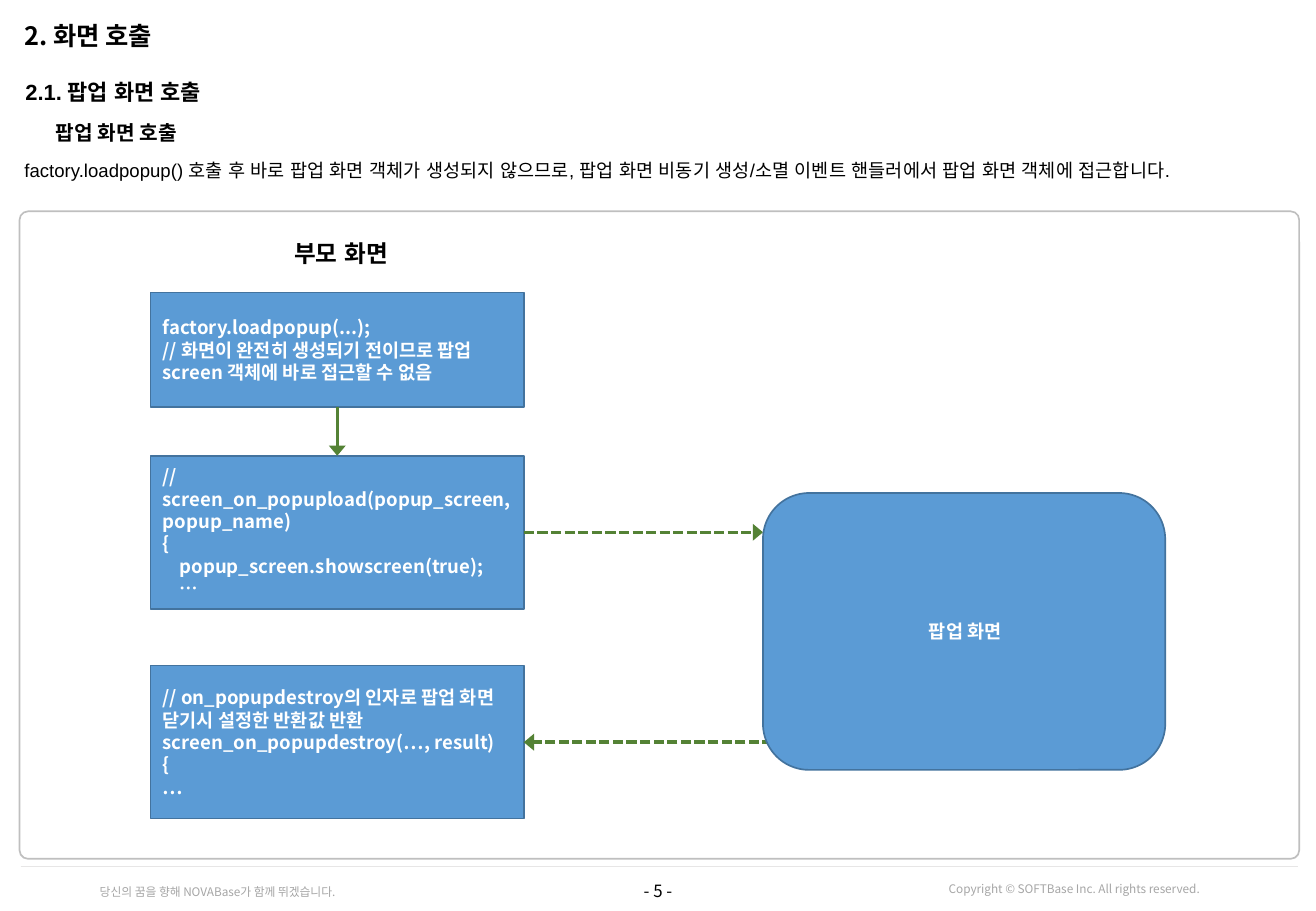
from lxml import etree
from pptx import Presentation
from pptx.dml.color import RGBColor
from pptx.enum.dml import MSO_LINE
from pptx.enum.shapes import MSO_CONNECTOR, MSO_SHAPE
from pptx.enum.text import MSO_ANCHOR, MSO_AUTO_SIZE, PP_ALIGN
from pptx.oxml.ns import qn
from pptx.util import Cm, Pt

BLACK = RGBColor(0x00, 0x00, 0x00)
WHITE = RGBColor(0xFF, 0xFF, 0xFF)
GRAY = RGBColor(0xA6, 0xA6, 0xA6)
SILVER = RGBColor(0xBF, 0xBF, 0xBF)
PALE = RGBColor(0xE7, 0xE6, 0xE6)
BLUE = RGBColor(0x5B, 0x9B, 0xD5)
NAVY = RGBColor(0x43, 0x73, 0x9E)
GREEN = RGBColor(0x54, 0x82, 0x35)
NOTO, ARIAL = "Noto Sans CJK KR", "Arial"
LEFT, CENTER, RIGHT = PP_ALIGN.LEFT, PP_ALIGN.CENTER, PP_ALIGN.RIGHT
TOP, MIDDLE = MSO_ANCHOR.TOP, MSO_ANCHOR.MIDDLE
NO_FIT = MSO_AUTO_SIZE.NONE
STRAIGHT = MSO_CONNECTOR.STRAIGHT
RECT, ROUND = MSO_SHAPE.RECTANGLE, MSO_SHAPE.ROUNDED_RECTANGLE
DASH = MSO_LINE.SQUARE_DOT
WIDE, HIGH = 27.51, 19.05

HEADS = [
    (0, "2. 화면 호출", 0, 0, 0.86, 15, NOTO, True),
    (1, "2.1. 팝업 화면 호출", 0.02, 1.22, 0.71, 13, ARIAL, True),
    (3, "팝업 화면 호출", 0.66, 2.08, 0.71, 12, NOTO, True),
    (2, "factory.loadpopup() 호출 후 바로 팝업 화면 객체가 생성되지 않으므로, "
        "팝업 화면 비동기 생성/소멸 이벤트 핸들러에서 팝업 화면 객체에 접근합니다.",
     0, 2.9, 1.04, 11, ARIAL, False),
]
LOAD = ["factory.loadpopup(...);\n// 화면이 완전히 생성되기 전이므로 팝업 screen 객체에 바로 접근할 수 없음"]
SHOW = ["//\nscreen_on_popupload(popup_screen, popup_name)\n{",
        "    popup_screen.showscreen(true);", "    …"]
CLOSE = ["// on_popupdestroy의 인자로 팝업 화면 닫기시 설정한 반환값 반환\n"
         "screen_on_popupdestroy(…, result)\n{\n…"]


def write(frame, paras, size, face, color, bold=False, align=LEFT):
    """Fill a text frame with paragraphs, run by run."""
    for i, text in enumerate(paras):
        para = frame.paragraphs[0] if i == 0 else frame.add_paragraph()
        para.alignment = align
        para.line_spacing = 1.0
        para.space_before = Pt(0)
        for j, line in enumerate(text.split("\n")):
            if j:
                para.add_line_break()
            run = para.add_run()
            run.text = line
            font = run.font
            font.size, font.bold, font.name = Pt(size), bold, face
            font.color.rgb = color
            east = etree.SubElement(font._element, qn("a:ea"))
            east.set("typeface", face)


def label(slide, x, y, w, h, text, size, face, color, align, bold=False, anchor=MIDDLE):
    """Place one line of text in a box."""
    frame = slide.shapes.add_textbox(Cm(x), Cm(y), Cm(w), Cm(h)).text_frame
    frame.word_wrap = True
    frame.vertical_anchor = anchor
    write(frame, [text], size, face, color, bold, align)


def block(slide, x, y, w, h, paras, kind=RECT, align=LEFT):
    """Place a blue box with white text."""
    shape = slide.shapes.add_shape(kind, Cm(x), Cm(y), Cm(w), Cm(h))
    shape.shadow.inherit = False
    shape.fill.solid()
    shape.fill.fore_color.rgb = BLUE
    shape.line.color.rgb = NAVY
    shape.line.width = Pt(1)
    frame = shape.text_frame
    frame.word_wrap = True
    frame.vertical_anchor = MIDDLE
    frame.margin_right = Cm(0.2)
    write(frame, paras, 11, NOTO, WHITE, True, align)
    return shape


def rule(slide, x1, y1, x2, y2, color, width):
    """Draw a straight line without a shadow."""
    line = slide.shapes.add_connector(STRAIGHT, Cm(x1), Cm(y1), Cm(x2), Cm(y2))
    line.line.color.rgb = color
    line.line.width = Pt(width)
    etree.SubElement(line._element.spPr, qn("a:effectLst"))
    return line


def arrow(slide, x1, y1, x2, y2, dash=None):
    """Draw a green arrow, dashed on request."""
    line = rule(slide, x1, y1, x2, y2, GREEN, 2)
    if dash:
        line.line.dash_style = dash
    tail = etree.SubElement(line.line._get_or_add_ln(), qn("a:tailEnd"))
    tail.set("type", "triangle")
    tail.set("w", "lg")
    tail.set("len", "med")
    return line


def header(slide, x, y, w):
    """Fill the title and body placeholders down the top of the page."""
    parts = {p.placeholder_format.idx: p for p in slide.placeholders}
    for key, text, dx, dy, h, size, face, bold in HEADS:
        part = parts.pop(key)
        part.left, part.top = Cm(x + dx), Cm(y + dy)
        part.width, part.height = Cm(w - dx), Cm(h)
        frame = part.text_frame
        frame.auto_size = NO_FIT
        frame.word_wrap = True
        frame.vertical_anchor = TOP
        frame.margin_left = frame.margin_right = Cm(0.1)
        frame.margin_top = frame.margin_bottom = Cm(0.1)
        props = frame.paragraphs[0]._p.get_or_add_pPr()
        props.set("marL", "0")
        props.set("indent", "0")
        etree.SubElement(props, qn("a:buNone"))
        write(frame, [text], size, face, BLACK, bold)
    for part in parts.values():
        part._element.getparent().remove(part._element)


def flow(slide, x, y, w, h):
    """Draw the framed flow between the parent and popup screens."""
    frame = slide.shapes.add_shape(ROUND, Cm(x), Cm(y), Cm(w), Cm(h))
    frame.adjustments[0] = 0.013
    frame.shadow.inherit = False
    frame.fill.background()
    frame.line.color.rgb = SILVER
    frame.line.width = Pt(1)

    left, wide, tall = x + 2.74, 7.8, 3.2
    edge, mid = left + wide, left + wide / 2
    first, second, third = y + 1.7, y + 5.11, y + 9.5
    label(slide, mid - 1.92, y + 0.46, 4, 0.86, "부모 화면", 14, ARIAL, BLACK,
          CENTER, True, TOP)
    load = block(slide, left, first, wide, 2.39, LOAD)
    show = block(slide, left, second, wide, tall, SHOW)
    close = block(slide, left, third, wide, tall, CLOSE)

    pop = x + 15.54
    down = arrow(slide, mid, first + 2.39, mid, second)
    down.begin_connect(load, 2)
    down.end_connect(show, 0)
    out = arrow(slide, edge, second + tall / 2, pop, second + tall / 2, DASH)
    out.begin_connect(show, 3)
    back = arrow(slide, pop + 0.2, third + tall / 2, edge, third + tall / 2, DASH)
    back.end_connect(close, 3)
    block(slide, pop, y + 5.89, 8.41, 5.79, ["팝업 화면"], ROUND, CENTER)


def footer(slide, x, y, w):
    """Draw the bottom rule, slogan, page number and copyright."""
    rule(slide, x + 0.43, y, x + w - 0.38, y, PALE, 0.5)
    label(slide, x, y + 0.13, w, 0.79, "- 5 -", 10, NOTO, BLACK, CENTER)
    label(slide, x + 1.26, y + 0.25, 6, 0.56,
          "당신의 꿈을 향해 NOVABase가 함께 뛰겠습니다.", 7, NOTO, GRAY, RIGHT)
    label(slide, x + 19.33, y + 0.2, 6, 0.56,
          "Copyright © SOFTBase Inc. All rights reserved.", 7, NOTO, GRAY, RIGHT)


def main():
    """Build and save the slide."""
    deck = Presentation()
    deck.slide_width, deck.slide_height = Cm(WIDE), Cm(HIGH)
    slide = deck.slides.add_slide(deck.slide_layouts[4])
    header(slide, 0.41, 0.33, 26.8)
    flow(slide, 0.41, 4.42, 26.75, 13.54)
    footer(slide, 0, 18.11, WIDE)
    deck.save("out.pptx")


if __name__ == "__main__":
    main()
